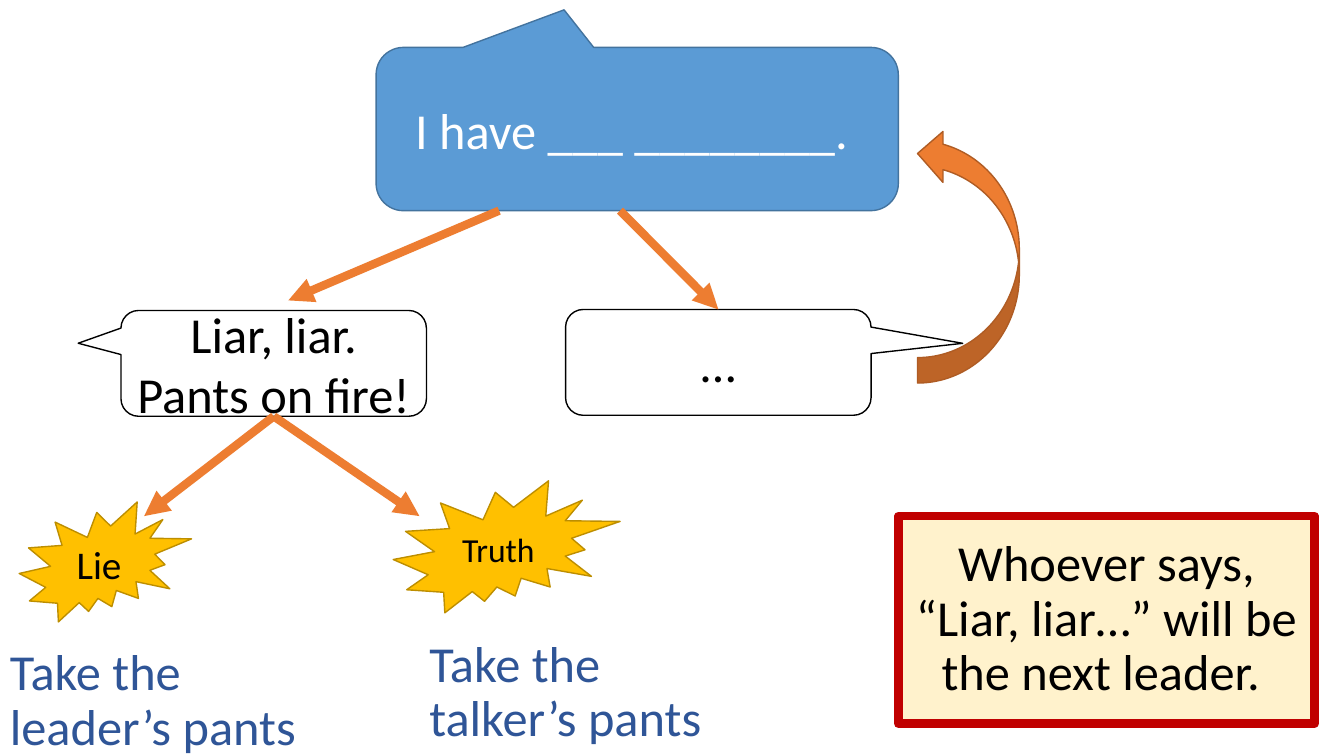
from lxml.etree import SubElement
from pptx import Presentation
from pptx.dml.color import RGBColor
from pptx.enum.shapes import MSO_CONNECTOR, MSO_SHAPE
from pptx.enum.text import MSO_ANCHOR, PP_ALIGN
from pptx.oxml.ns import qn
from pptx.util import Inches, Pt

COLORS = {
    "white": "FFFFFF",
    "black": "000000",
    "blue": "5B9BD5",
    "blue_edge": "43739E",
    "orange": "ED7D31",
    "orange_edge": "AF5C24",
    "gold": "FFC000",
    "gold_edge": "BD8E00",
    "caption": "2F5597",
    "cream": "FFF2CC",
    "red": "C00000",
}
FONT = "Calibri"


def rgb(name):
    return RGBColor.from_string(COLORS[name])


def write_text(shape, text, size=36, color="black", align=PP_ALIGN.CENTER,
               anchor=MSO_ANCHOR.MIDDLE, line_spacing=None):
    """Fill a shape with text, one paragraph per line of the string."""
    frame = shape.text_frame
    frame.word_wrap = True
    frame.vertical_anchor = anchor
    frame.text = text
    for para in frame.paragraphs:
        para.alignment = align
        para.line_spacing = line_spacing
        for span in para.runs:
            span.font.name = FONT
            span.font.size = Pt(size)
            span.font.color.rgb = rgb(color)


def add_figure(slide, kind, left, top, width, height, fill, edge,
               edge_width=1, adjustments=()):
    shape = slide.shapes.add_shape(
        kind, Inches(left), Inches(top), Inches(width), Inches(height))
    shape.shadow.inherit = False
    shape.fill.solid()
    shape.fill.fore_color.rgb = rgb(fill)
    shape.line.color.rgb = rgb(edge)
    shape.line.width = Pt(edge_width)
    for index, value in enumerate(adjustments):
        shape.adjustments[index] = value
    return shape


def add_callout(slide, text, left, top, width, height, tip,
                fill="white", edge="black", color="black"):
    """Add a rounded speech bubble; tip is its point relative to the centre."""
    callout = add_figure(slide, MSO_SHAPE.ROUNDED_RECTANGULAR_CALLOUT,
                         left, top, width, height, fill, edge,
                         adjustments=(*tip, 0.167))
    write_text(callout, text, color=color)
    return callout


def add_burst(slide, text, left, top, width, height, size):
    burst = add_figure(slide, MSO_SHAPE.EXPLOSION2, left, top, width, height,
                       "gold", "gold_edge")
    write_text(burst, text, size=size)


def add_arrow(slide, start, end, source=None, target=None):
    """Add an arrow, joined to the source's bottom or the target's top if given."""
    arrow = slide.shapes.add_connector(
        MSO_CONNECTOR.STRAIGHT, *map(Inches, (*start, *end)))
    arrow.line.color.rgb = rgb("orange")
    arrow.line.width = Pt(6)
    SubElement(arrow.line._get_or_add_ln(), qn("a:tailEnd"), type="triangle")
    SubElement(arrow._element.spPr, qn("a:effectLst"))
    if source is not None:
        arrow.begin_connect(source, 2)
    if target is not None:
        arrow.end_connect(target, 0)


def add_caption(slide, text, left, top):
    box = slide.shapes.add_textbox(
        Inches(left), Inches(top), Inches(3.44), Inches(1.03))
    write_text(box, text, color="caption", align=PP_ALIGN.LEFT,
               anchor=MSO_ANCHOR.TOP, line_spacing=0.9)


def main():
    deck = Presentation()
    deck.slide_width, deck.slide_height = Inches(13.33), Inches(7.5)
    slide = deck.slides.add_slide(deck.slide_layouts[6])

    add_callout(slide, "I have ___ ________. ", 3.73, 0.47, 5.18, 1.62,
                (-0.14, -0.73), "blue", "blue_edge", "white")
    accusation = add_callout(slide, "Liar, liar. Pants on fire!",
                             1.2, 3.08, 3.03, 1.05, (-0.64, -0.19))
    silence = add_callout(slide, "…", 5.61, 3.07, 3.03, 1.05, (0.8, -0.18))

    add_arrow(slide, (4.95, 2.09), (2.86, 2.98))
    add_arrow(slide, (6.15, 2.09), (7.13, 3.07), target=silence)
    return_arrow = add_figure(slide, MSO_SHAPE.CURVED_UP_ARROW,
                              8.34, 2.03, 2.53, 1.01, "orange", "orange_edge")
    return_arrow.rotation = 270
    for end in ((1.43, 5.12), (4.16, 5.12)):
        add_arrow(slide, (2.71, 4.13), end, source=accusation)

    add_burst(slide, "Lie", 0.19, 4.98, 1.71, 1.19, 28)
    add_burst(slide, "Truth", 3.9, 4.77, 2.25, 1.31, 24)
    add_caption(slide, "Take the leader’s pants", 0, 6.37)
    add_caption(slide, "Take the\ntalker’s pants", 4.16, 6.29)

    rule = add_figure(slide, MSO_SHAPE.RECTANGLE, 8.91, 5.12, 4.13, 2.06,
                      "cream", "red", edge_width=6)
    write_text(rule, "Whoever says, “Liar, liar…” will be the next leader. ",
               line_spacing=0.9)

    deck.save("out.pptx")


if __name__ == "__main__":
    main()
